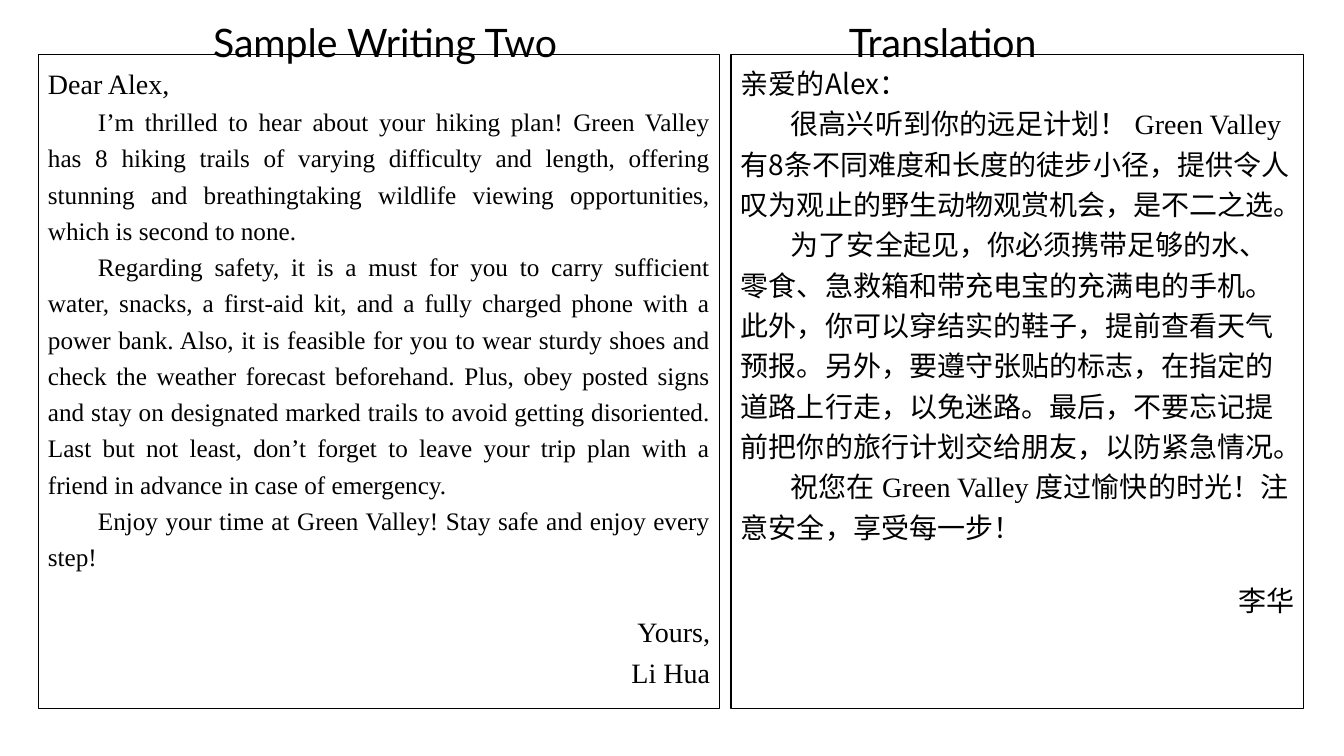
"""Build a slide with a sample letter beside its Chinese translation."""
import pptx
import pptx.dml.color
import pptx.enum.shapes
import pptx.enum.text
import pptx.oxml.ns
import pptx.util
from lxml import etree

PX = 914400 / 100.8
BLACK = pptx.dml.color.RGBColor(0, 0, 0)
ALIGN = pptx.enum.text.PP_ALIGN
TIMES = "Times New Roman"
NOTO = "Noto Sans CJK SC"
INDENT = 50


def px(*lengths):
    """Turn pixel lengths into EMU."""
    return [pptx.util.Emu(round(length * PX)) for length in lengths]


def write(frame, text, font=TIMES, size=20, align=ALIGN.LEFT, indent=0, spacing=1.2, before=0):
    """Add a paragraph; parts between bars are set in Times New Roman."""
    paragraph = frame.paragraphs[0] if not frame.text else frame.add_paragraph()
    paragraph.alignment = align
    paragraph.line_spacing = spacing
    paragraph.space_before = pptx.util.Pt(before)
    properties = paragraph._p.get_or_add_pPr()
    properties.set("marL", "0")
    properties.set("indent", str(px(indent)[0]))
    for number, part in enumerate(text.split("|")):
        run = paragraph.add_run()
        run.text = part
        run.font.name = TIMES if number % 2 else font
        run.font.size = pptx.util.Pt(size)
        run.font.color.rgb = BLACK
        east_asian = etree.SubElement(run._r.get_or_add_rPr(), pptx.oxml.ns.qn("a:ea"))
        east_asian.set("typeface", run.font.name)


presentation = pptx.Presentation()
presentation.slide_width, presentation.slide_height = px(1344, 756)
slide = presentation.slides.add_slide(presentation.slide_layouts[5])

letter_frames = []
for left, width in ((38, 682), (731, 573)):
    shape = slide.shapes.add_shape(
        pptx.enum.shapes.MSO_SHAPE.RECTANGLE, *px(left, 55, width, 654))
    shape.shadow.inherit = False
    shape.fill.background()
    shape.line.color.rgb = BLACK
    shape.line.width = pptx.util.Pt(0.75)
    letter_frames.append(shape.text_frame)
english, chinese = letter_frames

title = slide.shapes.title
title.left, title.top, title.width, title.height = px(203, 13, 418, 57)
translation_heading = slide.shapes.add_textbox(*px(839, 13, 265, 57))
for heading, text in ((title, "Sample Writing Two"), (translation_heading, "Translation")):
    write(heading.text_frame, text, font="Lato", size=28, spacing=1.0)

for frame in (title.text_frame, translation_heading.text_frame, english, chinese):
    frame.word_wrap = True
    frame.auto_size = pptx.enum.text.MSO_AUTO_SIZE.NONE
    frame.vertical_anchor = pptx.enum.text.MSO_ANCHOR.TOP

write(english, "Dear Alex,")
for text in (
    "I’m thrilled to hear about your hiking plan! Green Valley has 8 hiking trails of varying "
    "difficulty and length, offering stunning and breathingtaking wildlife viewing "
    "opportunities, which is second to none.",
    "Regarding safety, it is a must for you to carry sufficient water, snacks, a first-aid kit, "
    "and a fully charged phone with a power bank. Also, it is feasible for you to wear sturdy "
    "shoes and check the weather forecast beforehand. Plus, obey posted signs and stay on "
    "designated marked trails to avoid getting disoriented. Last but not least, don’t forget to "
    "leave your trip plan with a friend in advance in case of emergency.",
    "Enjoy your time at Green Valley! Stay safe and enjoy every step!",
):
    write(english, text, size=18, align=ALIGN.JUSTIFY, indent=INDENT)
write(english, "Yours,", align=ALIGN.RIGHT, before=26)
write(english, "Li Hua", align=ALIGN.RIGHT)

write(chinese, "亲爱的Alex：", font=NOTO)
for text in (
    "很高兴听到你的远足计划！| Green Valley |有8条不同难度和长度的徒步小径，"
    "提供令人叹为观止的野生动物观赏机会，是不二之选。",
    "为了安全起见，你必须携带足够的水、零食、急救箱和带充电宝的充满电的手机。"
    "此外，你可以穿结实的鞋子，提前查看天气预报。另外，要遵守张贴的标志，"
    "在指定的道路上行走，以免迷路。最后，不要忘记提前把你的旅行计划交给朋友，以防紧急情况。",
    "祝您在| Green Valley |度过愉快的时光！注意安全，享受每一步！",
):
    write(chinese, text, font=NOTO, indent=INDENT)
write(chinese, "李华", font=NOTO, align=ALIGN.RIGHT, spacing=1.1, before=26)

presentation.save("out.pptx")
